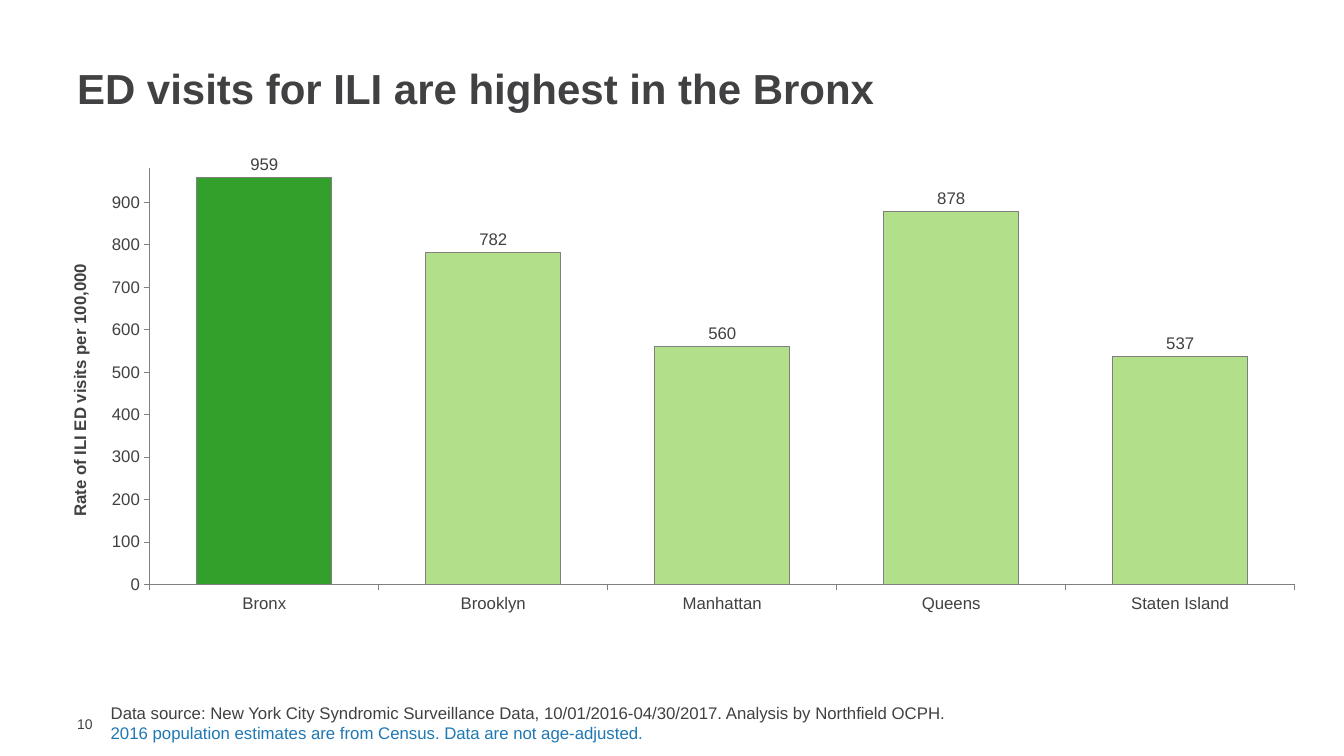
from lxml import etree
from pptx import Presentation
from pptx.chart.data import CategoryChartData
from pptx.dml.color import RGBColor
from pptx.enum import chart as charts, text
from pptx.oxml import ns
from pptx.util import Pt

COLORS = {"ink": "414042", "note": "1F78B4", "axis": "808080",
          "bar": "B2DF8A", "highlight": "33A02C"}
FONT = "Arial"
RATES = {"Bronx": 959, "Brooklyn": 782, "Manhattan": 560,
         "Queens": 878, "Staten Island": 537}
PLOT_AREA = {"x": 0.067, "y": 0.027, "w": 0.921, "h": 0.732}


def rgb(name):
    return RGBColor.from_string(COLORS[name])


def style_font(font, size, color="ink", bold=False):
    font.name, font.size, font.bold = FONT, Pt(size), bold
    font.color.rgb = rgb(color)


def style_line(line):
    line.color.rgb = rgb("axis")
    line.width = Pt(0.75)


def add_text(page, box, lines, size, bold=False, insets=(7.2, 3.6, 7.2, 3.6),
             anchor=text.MSO_ANCHOR.MIDDLE, spacing=None):
    """Place one paragraph per (wording, color) pair in the box."""
    frame = page.shapes.add_textbox(*map(Pt, box)).text_frame
    frame.word_wrap = True
    frame.vertical_anchor = anchor
    (frame.margin_left, frame.margin_top,
     frame.margin_right, frame.margin_bottom) = map(Pt, insets)
    for index, (wording, color) in enumerate(lines):
        para = frame.add_paragraph() if index else frame.paragraphs[0]
        para.line_spacing = spacing
        span = para.add_run()
        span.text = wording
        style_font(span.font, size, color, bold)


def set_plot_area(chart):
    """Fix the inner plot area as fractions of the chart."""
    plot_area = chart.element.find(".//" + ns.qn("c:plotArea"))
    for old in plot_area.findall(ns.qn("c:layout")):
        plot_area.remove(old)
    layout = etree.Element(ns.qn("c:layout"))
    manual = etree.SubElement(layout, ns.qn("c:manualLayout"))
    settings = {"layoutTarget": "inner", "xMode": "edge", "yMode": "edge", **PLOT_AREA}
    for tag, value in settings.items():
        etree.SubElement(manual, ns.qn("c:" + tag)).set("val", str(value))
    plot_area.insert(0, layout)


def style_axes(chart):
    for axis in (chart.category_axis, chart.value_axis):
        axis.has_major_gridlines = False
        axis.major_tick_mark = charts.XL_TICK_MARK.OUTSIDE
        axis.minor_tick_mark = charts.XL_TICK_MARK.NONE
        style_line(axis.format.line)
        style_font(axis.tick_labels.font, 12)
    axis = chart.value_axis
    axis.minimum_scale, axis.maximum_scale, axis.major_unit = 0, 980, 100
    span = axis.axis_title.text_frame.paragraphs[0].add_run()
    span.text = "Rate of ILI ED visits per 100,000"
    style_font(span.font, 12, bold=True)


def add_rate_chart(page, box):
    data = CategoryChartData(number_format="0")
    data.categories = list(RATES)
    data.add_series("Series 1", list(RATES.values()))
    chart = page.shapes.add_chart(
        charts.XL_CHART_TYPE.COLUMN_CLUSTERED, *map(Pt, box), data).chart
    chart.has_title = chart.has_legend = False
    style_font(chart.font, 12)
    set_plot_area(chart)
    style_axes(chart)

    plot = chart.plots[0]
    plot.gap_width = 70
    plot.vary_by_categories = False
    series = plot.series[0]
    bronx = series.points[0]
    for bar, color in ((series, "bar"), (bronx, "highlight")):
        bar.format.fill.solid()
        bar.format.fill.fore_color.rgb = rgb(color)
        style_line(bar.format.line)

    labels = series.data_labels
    labels.show_value = True
    labels.number_format, labels.number_format_is_linked = "0", False
    labels.position = charts.XL_LABEL_POSITION.OUTSIDE_END
    style_font(labels.font, 12)


def add_footer(page, box):
    left, top, width, height = box
    add_text(page, (left, top + 13, 31, 12), [("10", "ink")], 10,
             insets=(7.2, 0, 0, 0))
    source = ("Data source: New York City Syndromic Surveillance Data, "
              "10/01/2016-04/30/2017. Analysis by Northfield OCPH.")
    note = "2016 population estimates are from Census. Data are not age-adjusted."
    add_text(page, (left + 24, top, width - 24, height),
             [(source, "ink"), (note, "note")], 12, anchor=text.MSO_ANCHOR.TOP)


def main():
    deck = Presentation()
    deck.slide_width, deck.slide_height = Pt(960), Pt(540)
    page = deck.slides.add_slide(deck.slide_layouts[6])
    add_text(page, (48, 48, 864, 36),
             [("ED visits for ILI are highest in the Bronx", "ink")],
             30, bold=True, spacing=0.8)
    add_rate_chart(page, (47.5, 109.4, 888, 406))
    add_footer(page, (48, 498.2, 738, 36))
    deck.save("out.pptx")


if __name__ == "__main__":
    main()
